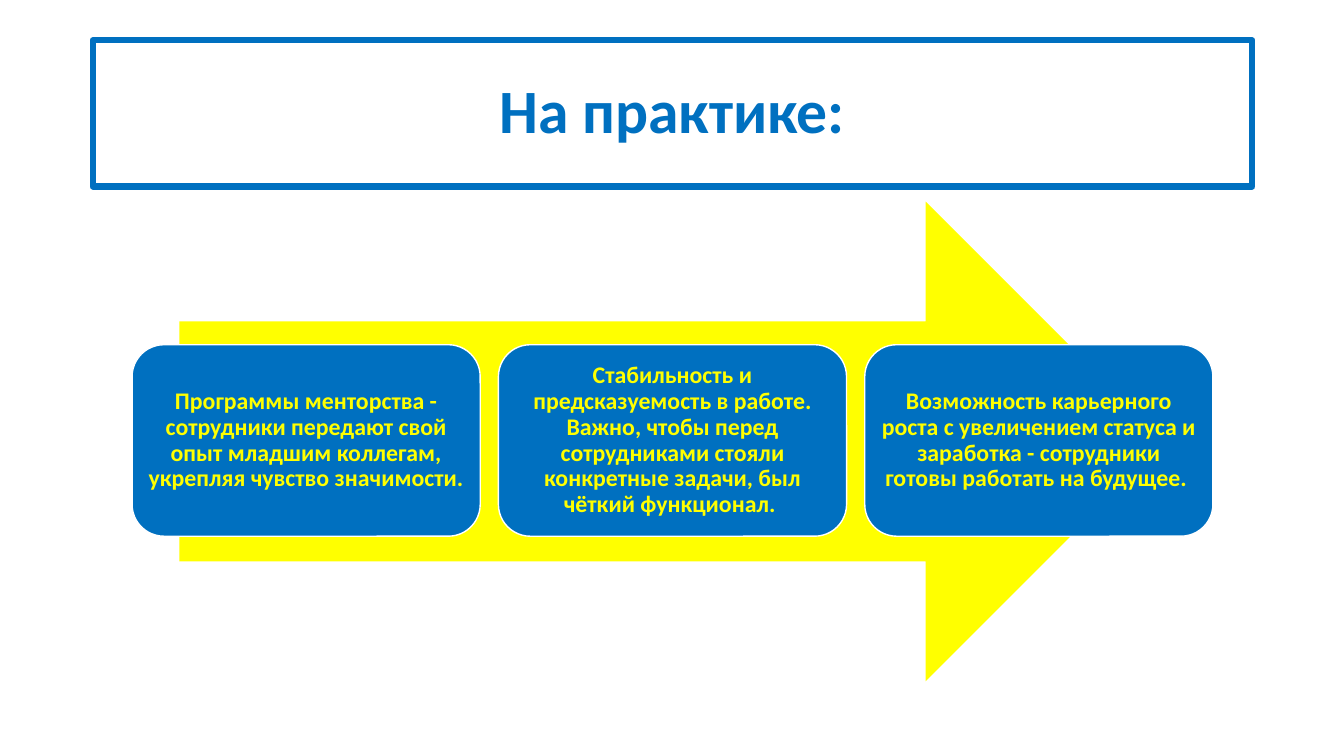
from pptx import Presentation
from pptx import util as u
from pptx.dml.color import RGBColor
from pptx.enum import shapes, text

BLUE, YELLOW, WHITE = "0070C0", "FFFF00", "FFFFFF"
STEPS = [
    "Программы менторства - сотрудники передают свой опыт младшим коллегам, "
    "укрепляя чувство значимости. ",
    "Стабильность и предсказуемость в работе. Важно, чтобы перед сотрудниками "
    "стояли конкретные задачи, был чёткий функционал. ",
    "Возможность карьерного роста с увеличением статуса и заработка - "
    "сотрудники готовы работать на будущее. ",
]


def color(hex_value):
    return RGBColor.from_string(hex_value)


def place(shape, box):
    for name, value in zip(("left", "top", "width", "height"), box):
        setattr(shape, name, u.Inches(value))


def set_line(shape, hex_value, width):
    shape.line.color.rgb = color(hex_value)
    shape.line.width = u.Pt(width)


def write_text(shape, wording, size, hex_value):
    frame = shape.text_frame
    frame.text = wording
    frame.word_wrap = True
    frame.auto_size = text.MSO_AUTO_SIZE.NONE
    frame.vertical_anchor = text.MSO_ANCHOR.MIDDLE
    paragraph = frame.paragraphs[0]
    paragraph.alignment = text.PP_ALIGN.CENTER
    paragraph.line_spacing = 0.9
    font = paragraph.runs[0].font
    for name, value in {"name": "Calibri", "size": u.Pt(size), "bold": True}.items():
        setattr(font, name, value)
    font.color.rgb = color(hex_value)


def add_title(slide, box):
    title = slide.shapes.title
    place(title, box)
    set_line(title, BLUE, 4.5)
    write_text(title, "На практике:", 44, BLUE)


def add_filled_shape(slide, kind, box, fill):
    shape = slide.shapes.add_shape(kind, *map(u.Inches, box))
    shape.shadow.inherit = False
    shape.fill.solid()
    shape.fill.fore_color.rgb = color(fill)
    return shape


def add_arrow(slide, box):
    arrow = add_filled_shape(slide, shapes.MSO_SHAPE.RIGHT_ARROW, box, YELLOW)
    arrow.line.fill.background()


def add_steps(slide, box, gap):
    """Divide the box into equal cards, one for each step."""
    left, top, width, height = box
    card_width = (width - gap * (len(STEPS) - 1)) / len(STEPS)
    for index, wording in enumerate(STEPS):
        card_box = (left + index * (card_width + gap), top, card_width, height)
        card = add_filled_shape(
            slide, shapes.MSO_SHAPE.ROUNDED_RECTANGLE, card_box, BLUE)
        set_line(card, WHITE, 1)
        write_text(card, wording, 17, YELLOW)
        for side in ("left", "top", "right", "bottom"):
            setattr(card.text_frame, f"margin_{side}", u.Inches(0.07))


def main():
    presentation = Presentation()
    presentation.slide_width = u.Inches(13.33)
    presentation.slide_height = u.Inches(7.5)
    slide = presentation.slides.add_slide(presentation.slide_layouts[5])
    add_title(slide, (0.92, 0.4, 11.5, 1.45))
    add_arrow(slide, (1.78, 2, 9.78, 4.76))
    add_steps(slide, (1.31, 3.42, 10.72, 1.9), gap=0.18)
    presentation.save("out.pptx")


if __name__ == "__main__":
    main()
